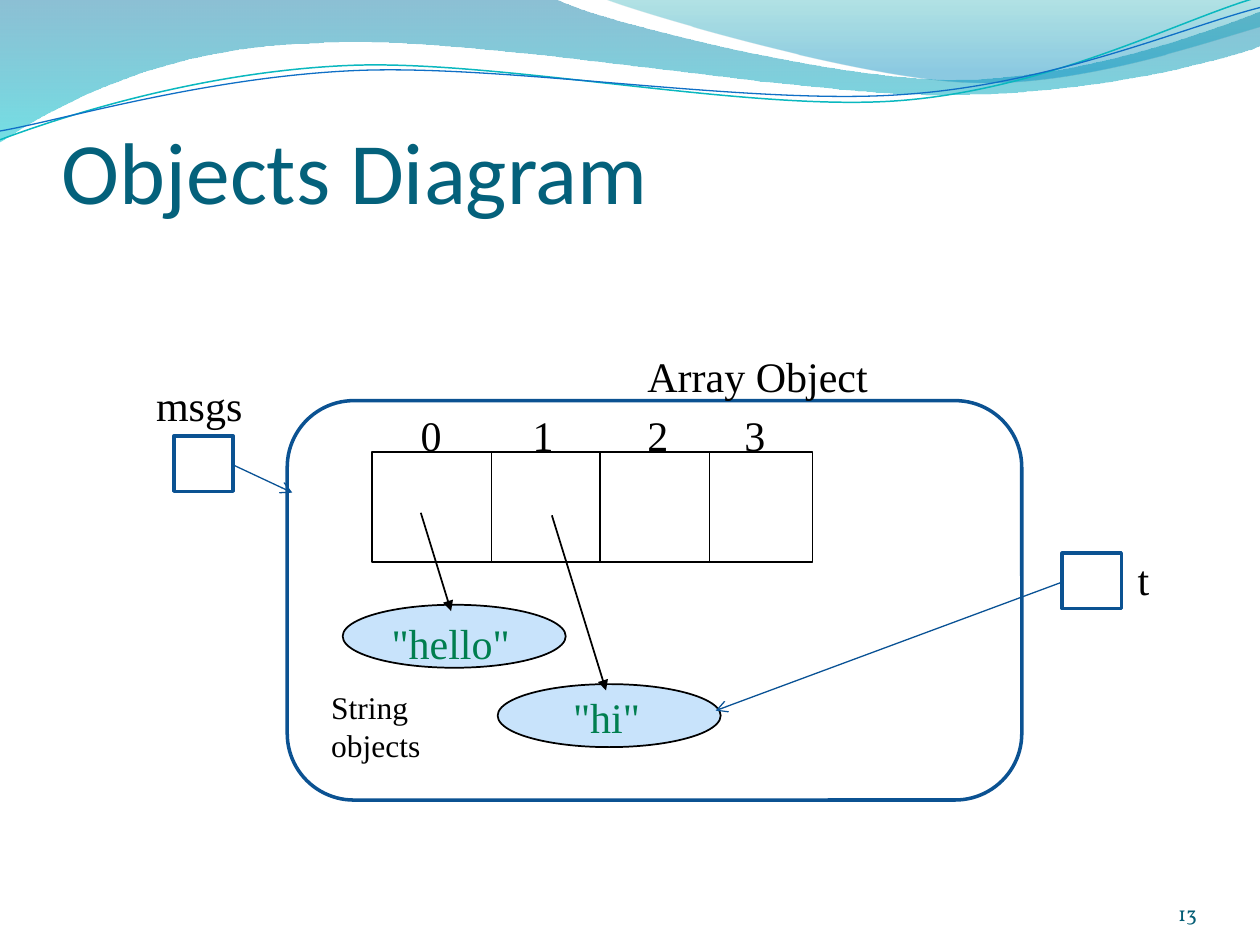
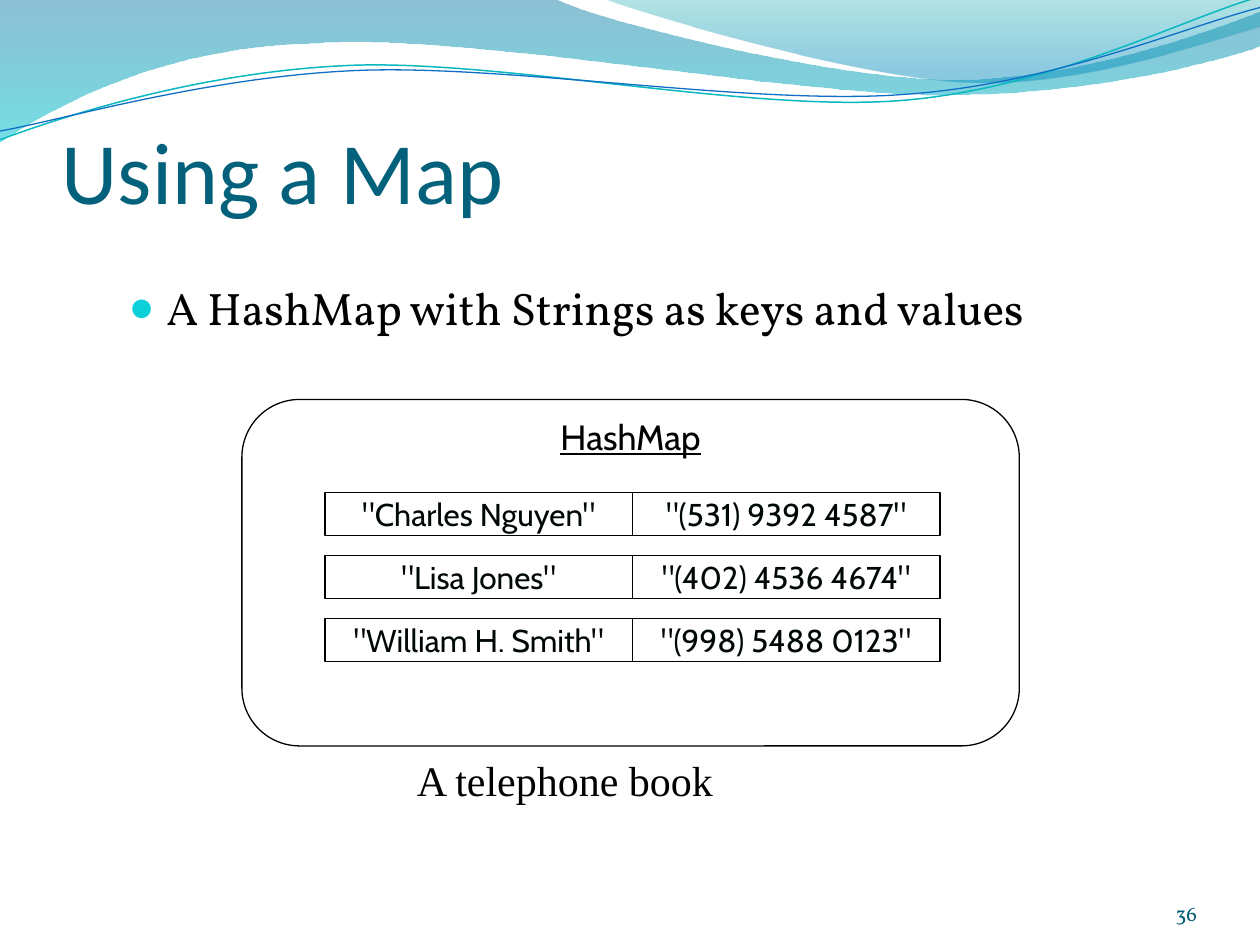
from lxml import etree
from pptx import Presentation
from pptx import util as u
from pptx.dml.color import RGBColor
from pptx.enum import shapes, text
from pptx.oxml.ns import qn

COLUMNS, ROWS = 10, 7.5
UNIT = u.Inches(1)
INK, NAVY, ARROW_BLUE = "000000", "0B5292", "095295"
TITLE_TEAL, NUMBER_TEAL, BULLET_TEAL = "04617B", "045D75", "0BD0D9"
OVAL_BLUE, STRING_GREEN, CELL_INK, WHITE = "C8E3FB", "007E4F", "000807", "FFFFFF"
SERIF, BODY, HEADING, CELL_FONT = "Times New Roman", "Vollkorn", "Calibri", "Cabin"
NO_INSETS = (0, 0, 0, 0)
INSETS = (0.1, 0.05, 0.1, 0.05)

BANDS = [
    ((0, 0), [
        [(4.4, -0.01)],
        [(4.76, 0.17), (6.64, 0.63), (7.58, 0.63)],
        [(8.53, 0.63), (9.58, 0.26), (10, 0.09)],
        [(10.01, 0.36)],
        [(9.83, 0.44), (8.7, 0.76), (7.46, 0.75)],
        [(6.22, 0.75), (3.82, 0.28), (2.57, 0.34)],
        [(1.29, 0.36), (0.46, 0.83), (-0.01, 1.13)],
    ], [(0, "0074A1", 45), (1, "00C6CF", 55)]),
    ((4.79, -0.01), [
        [(5.09, 0.11), (6.82, 0.62), (7.69, 0.65)],
        [(8.56, 0.69), (9.61, 0.32), (10, 0.21)],
        [(10, 0)],
    ], [(0, "00A1A9", 30), (0.8, "008BBF", 45)]),
]
WAVE_LINES = [
    ((0, 1.11), [
        [(0.48, 0.93), (1.58, 0.57), (2.77, 0.52)],
        [(3.95, 0.47), (5.93, 0.89), (7.13, 0.8)],
        [(8.33, 0.71), (9.38, 0.15), (9.98, -0.02)],
    ], "0AB8BF", 0.85),
    ((0, 1.04), [
        [(0.47, 0.96), (1.64, 0.61), (2.83, 0.56)],
        [(4.03, 0.51), (5.97, 0.84), (7.17, 0.75)],
        [(8.36, 0.67), (9.41, 0.21), (10, 0.06)],
    ], "0F6FC6", 0.75),
]


def rgb(value):
    """Turn a hex string into a colour."""
    return RGBColor.from_string(value)


def grid(*lengths):
    """Turn grid lengths into slide units."""
    return [u.Emu(round(length * UNIT)) for length in lengths]


def paint(shape, fill=None, line=None, weight=1):
    """Set fill and outline, without a shadow."""
    shape.shadow.inherit = False
    if fill:
        shape.fill.solid()
        shape.fill.fore_color.rgb = rgb(fill)
    else:
        shape.fill.background()
    if line:
        shape.line.color.rgb = rgb(line)
        shape.line.width = u.Pt(weight)
    else:
        shape.line.fill.background()


def write(box, lines, size, font, colour, align=text.PP_ALIGN.LEFT,
          anchor=text.MSO_ANCHOR.TOP, insets=INSETS, wrap=True, underline=False):
    """Fill a text frame with evenly formatted paragraphs."""
    frame = box.text_frame
    frame.text = lines
    frame.word_wrap = wrap
    frame.auto_size = text.MSO_AUTO_SIZE.NONE
    frame.vertical_anchor = anchor
    (frame.margin_left, frame.margin_top,
     frame.margin_right, frame.margin_bottom) = grid(*insets)
    for para in frame.paragraphs:
        para.alignment = align
        para.font.size = u.Pt(size)
        para.font.name = font
        para.font.color.rgb = rgb(colour)
        para.font.bold = False
        para.font.underline = underline


def label(page, lines, place, size=24, font=SERIF, colour=INK, **layout):
    """Add a text box."""
    box = page.shapes.add_textbox(*grid(*place))
    write(box, lines, size, font, colour, **layout)


def block(page, kind, place, fill=None, line=INK, weight=1):
    """Add a preset shape."""
    shape = page.shapes.add_shape(kind, *grid(*place))
    paint(shape, fill, line, weight)
    return shape


def connect(page, start, end, colour=INK, weight=1, head=None):
    """Add a straight line, with an arrowhead at its end if one is named."""
    line = page.shapes.add_connector(
        shapes.MSO_CONNECTOR.STRAIGHT, *grid(*start, *end))
    line.line.color.rgb = rgb(colour)
    line.line.width = u.Pt(weight)
    properties = line.element.spPr
    if head:
        etree.SubElement(properties.find(qn("a:ln")), qn("a:tailEnd"), type=head)
    etree.SubElement(properties, qn("a:effectLst"))


def bend(shape, segments):
    """Turn each run of three control points into one cubic curve."""
    corners = iter(list(shape.element.spPr.iter(qn("a:lnTo"))))
    for segment in segments:
        nodes = [next(corners) for _ in segment]
        if len(nodes) == 3:
            curve = etree.Element(qn("a:cubicBezTo"))
            nodes[0].addprevious(curve)
            for node in nodes:
                curve.append(node[0])
                node.getparent().remove(node)


def outline(page, start, segments, close):
    """Add a freeform of straight and cubic segments."""
    builder = page.shapes.build_freeform(*grid(*start), scale=1.0)
    corners = [grid(*point) for segment in segments for point in segment]
    builder.add_line_segments(corners, close=close)
    shape = builder.convert_to_shape()
    bend(shape, segments)
    paint(shape)
    return shape


def shade(shape, stops):
    """Give a shape a translucent gradient from top to bottom."""
    shape.fill.gradient()
    shape.fill.gradient_angle = 270
    for stop, (position, colour, _) in zip(shape.fill.gradient_stops, stops):
        stop.position = position
        stop.color.rgb = rgb(colour)
    colours = shape.element.spPr.find(qn("a:gradFill")).iter(qn("a:srgbClr"))
    for node, (_, _, opacity) in zip(colours, stops):
        etree.SubElement(node, qn("a:alpha"), val=str(opacity * 1000))


def decorate_master(deck, page):
    """Draw the waves and move them to the back of the master."""
    waves = []
    for start, segments, stops in BANDS:
        band = outline(page, start, segments, True)
        shade(band, stops)
        waves.append(band)
    for start, segments, colour, weight in WAVE_LINES:
        curve = outline(page, start, segments, False)
        paint(curve, line=colour, weight=weight)
        waves.append(curve)
    tree = deck.slide_master.shapes.element
    for index, wave in enumerate(waves):
        wave.element.nvSpPr.cNvPr.id = 101 + index
        tree.insert(2 + index, wave.element)


def place_on(shape, place):
    """Move and size a placeholder."""
    shape.left, shape.top, shape.width, shape.height = grid(*place)


def add_page(deck, layout, title, number):
    """Add a slide with its title and page number."""
    page = deck.slides.add_slide(deck.slide_layouts[layout])
    place_on(page.shapes.title, (0.49, 0.51, 9, 1.25))
    write(page.shapes.title, title, 50, HEADING, TITLE_TEAL,
          anchor=text.MSO_ANCHOR.BOTTOM, insets=(0, 0.05, 0, 0))
    label(page, number, (8.67, 6.95, 0.83, 0.4), 12, BODY, NUMBER_TEAL,
          align=text.PP_ALIGN.RIGHT, anchor=text.MSO_ANCHOR.BOTTOM, insets=NO_INSETS)
    return page


def add_bullet(page, line):
    """Fill the body placeholder with one bulleted line."""
    body = page.placeholders[1]
    place_on(body, (0.92, 2.17, 8.5, 0.75))
    write(body, line, 26, BODY, INK)
    properties = body.text_frame.paragraphs[0]._p.get_or_add_pPr()
    indent = grid(0.3)[0]
    properties.set("marL", str(indent))
    properties.set("indent", str(-indent))
    colour = etree.SubElement(properties, qn("a:buClr"))
    etree.SubElement(colour, qn("a:srgbClr"), val=BULLET_TEAL)
    etree.SubElement(properties, qn("a:buSzPct"), val="95000")
    etree.SubElement(properties, qn("a:buFont"), typeface="Arial")
    etree.SubElement(properties, qn("a:buChar"), char="●")
    properties.append(properties.find(qn("a:defRPr")))


def add_variable(page, name, left, top, name_place, target):
    """Draw a named reference square and its arrow."""
    width, height = 0.47, 0.44
    block(page, shapes.MSO_SHAPE.RECTANGLE, (left, top, width, height),
          line=NAVY, weight=2)
    label(page, name, name_place, wrap=False)
    side = left + width if target[0] > left else left
    connect(page, (side, top + 0.23), target, ARROW_BLUE, 0.75, "arrow")


def add_string(page, value, left, top, text_left, text_top, arrow_start, arrow_end):
    """Draw a string object and the arrow from its array cell."""
    block(page, shapes.MSO_SHAPE.OVAL, (left, top, 1.77, 0.5), OVAL_BLUE)
    label(page, value, (text_left, text_top, 1.6, 0.5), colour=STRING_GREEN)
    connect(page, arrow_start, arrow_end, head="triangle")


def draw_objects(page):
    """Draw the array object, its strings and the references."""
    top, height = 3.59, 0.87
    block(page, shapes.MSO_SHAPE.RECTANGLE, (2.95, top, 3.5, height))
    for x in (3.9, 4.76, 5.63):
        connect(page, (x, top), (x, top + height))
    for index, left in enumerate((3.24, 4.13, 5.04, 5.81)):
        label(page, str(index), (left, 3.2, 0.37, 0.5), wrap=False)
    block(page, shapes.MSO_SHAPE.ROUNDED_RECTANGLE, (2.28, 3.18, 5.83, 3.17),
          line=NAVY, weight=2)
    label(page, "Array Object", (5.04, 2.73, 1.97, 0.5), wrap=False)
    label(page, "String\nobjects", (2.53, 5.41, 0.92, 0.71), 18, wrap=False)
    add_string(page, '"hello"', 2.72, 4.8, 3.01, 4.85, (3.34, 4.07), (3.58, 4.85))
    add_string(page, '"hi"', 3.95, 5.43, 4.45, 5.44, (4.38, 4.09), (4.81, 5.48))
    add_variable(page, "msgs", 1.38, 3.46, (1.14, 2.96, 0.89, 0.5), (2.32, 3.91))
    add_variable(page, "t", 8.43, 4.39, (8.93, 4.34, 0.29, 0.5), (5.68, 5.64))


def draw_phone_book(page, entries):
    """Draw the map with one row of key and value for each entry."""
    block(page, shapes.MSO_SHAPE.ROUNDED_RECTANGLE, (1.92, 3.17, 6.17, 2.75),
          weight=0.75)
    label(page, "HashMap", (1.92, 3.25, 6.17, 0.43), 20, CELL_FONT,
          align=text.PP_ALIGN.CENTER, underline=True)
    width, pitch = 2.44, 0.5
    for row, entry in enumerate(entries):
        for column, value in enumerate(entry):
            place = (2.58 + column * width, 3.91 + row * pitch, width, 0.34)
            cell = block(page, shapes.MSO_SHAPE.RECTANGLE, place, WHITE)
            write(cell, f'"{value}"', 18, CELL_FONT, CELL_INK, text.PP_ALIGN.CENTER,
                  text.MSO_ANCHOR.MIDDLE, wrap=False)
    label(page, "A telephone book", (3.21, 5.94, 2.57, 0.51), wrap=False)


def main():
    """Build and save the deck."""
    deck = Presentation()
    deck.slide_width, deck.slide_height = grid(COLUMNS, ROWS)
    objects_page = add_page(deck, 5, "Objects Diagram", "13")
    decorate_master(deck, objects_page)
    draw_objects(objects_page)
    map_page = add_page(deck, 1, "Using a Map", "36")
    add_bullet(map_page, "A HashMap with Strings as keys and values")
    draw_phone_book(map_page, [
        ("Charles Nguyen", "(531) 9392 4587"),
        ("Lisa Jones", "(402) 4536 4674"),
        ("William H. Smith", "(998) 5488 0123"),
    ])
    deck.save("out.pptx")


if __name__ == "__main__":
    main()
